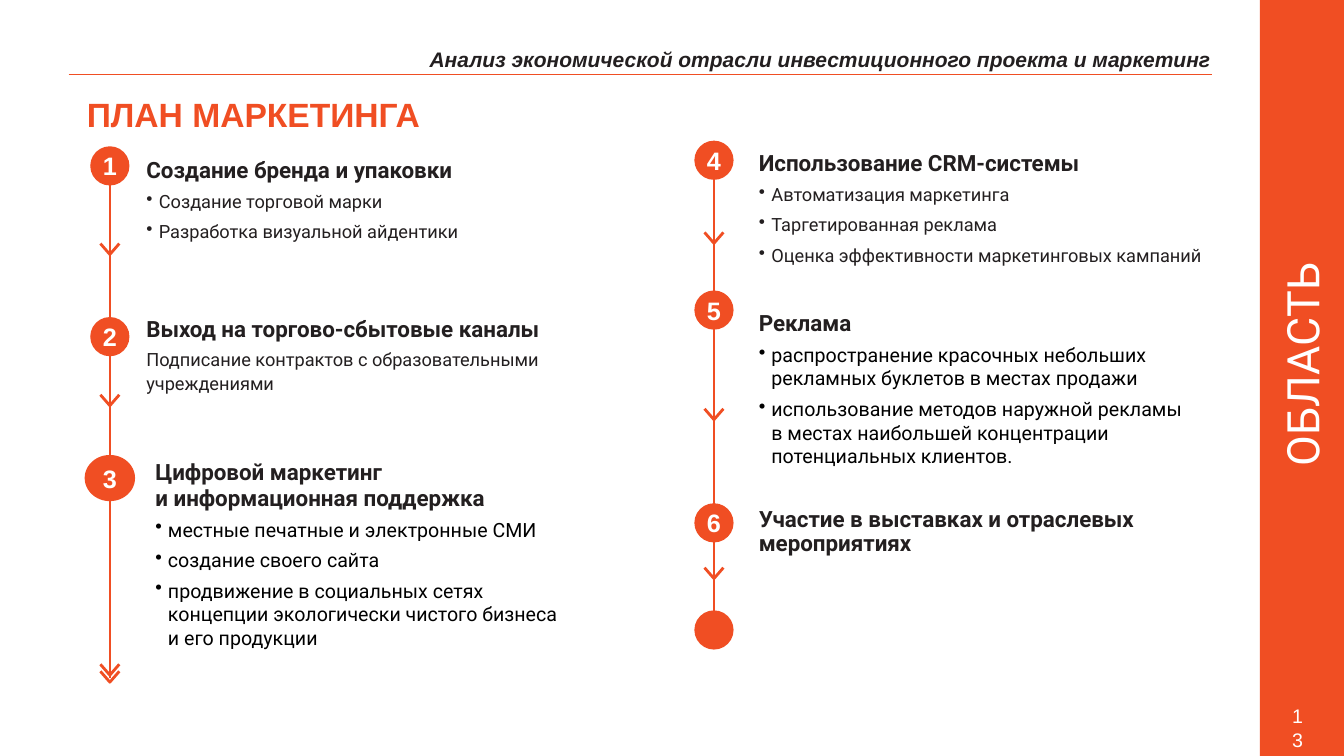
import pptx
import pptx.dml.color
import pptx.enum.shapes
import pptx.enum.text
import pptx.oxml.ns
import pptx.util
from lxml import etree

Pt = pptx.util.Pt
ALIGN = pptx.enum.text.PP_ALIGN
ORANGE = "F04E23"
DARK = "231F20"
BLACK = "000000"
WHITE = "FFFFFF"


def color(value):
    return pptx.dml.color.RGBColor.from_string(value)


def style_font(paragraph, name, size, fill, bold=False, italic=False):
    font = paragraph.font
    font.name = name
    font.size = Pt(size)
    font.bold = bold
    font.italic = italic
    font.color.rgb = color(fill)


def prepare_frame(shape, wrap=True):
    frame = shape.text_frame
    frame.margin_left = frame.margin_right = 0
    frame.margin_top = frame.margin_bottom = 0
    frame.word_wrap = wrap
    return frame


def add_text(slide, box, text, name, size, fill, align=ALIGN.LEFT, **styles):
    shape = slide.shapes.add_textbox(*map(Pt, box))
    paragraph = prepare_frame(shape).paragraphs[0]
    paragraph.text = text
    paragraph.alignment = align
    style_font(paragraph, name, size, fill, **styles)
    return shape


def add_bullet(paragraph):
    properties = paragraph._p.get_or_add_pPr()
    properties.set("marL", str(Pt(9)))
    properties.set("indent", str(-Pt(9)))
    bullet = etree.SubElement(properties, pptx.oxml.ns.qn("a:buChar"))
    bullet.set("char", "•")


def add_step(slide, box, headings, items, size=13, fill=DARK, gaps=(5, 5, 5),
             line_height=None, bulleted=True):
    frame = prepare_frame(slide.shapes.add_textbox(*map(Pt, box)))
    for index, text in enumerate(headings + items):
        paragraph = frame.paragraphs[0] if index == 0 else frame.add_paragraph()
        paragraph.text = text
        is_item = index >= len(headings)
        if is_item and bulleted:
            add_bullet(paragraph)
        if is_item:
            paragraph.space_before = Pt(gaps[index - len(headings)])
        if line_height and not (is_item and bulleted):
            paragraph.line_spacing = Pt(line_height)
        if is_item:
            style_font(paragraph, "Roboto", size, fill)
        else:
            style_font(paragraph, "Roboto", 16, DARK, bold=True)


def add_line(slide, x1, y1, x2, y2, width):
    line = slide.shapes.add_connector(
        pptx.enum.shapes.MSO_CONNECTOR.STRAIGHT, Pt(x1), Pt(y1), Pt(x2), Pt(y2))
    line.line.color.rgb = color(ORANGE)
    line.line.width = Pt(width)
    etree.SubElement(line._element.spPr, pptx.oxml.ns.qn("a:effectLst"))


def add_solid(slide, kind, left, top, width, height):
    shape = slide.shapes.add_shape(kind, Pt(left), Pt(top), Pt(width), Pt(height))
    shape.shadow.inherit = False
    shape.fill.solid()
    shape.fill.fore_color.rgb = color(ORANGE)
    shape.line.fill.background()
    return shape


def add_marker(slide, x, y, number, width=28, height=28):
    circle = add_solid(slide, pptx.enum.shapes.MSO_SHAPE.OVAL,
                       x - width / 2, y - height / 2, width, height)
    if number:
        frame = prepare_frame(circle, wrap=False)
        frame.vertical_anchor = pptx.enum.text.MSO_ANCHOR.MIDDLE
        paragraph = frame.paragraphs[0]
        paragraph.text = number
        paragraph.alignment = ALIGN.CENTER
        style_font(paragraph, "Arial", 18, WHITE, bold=True)


def add_chevron(slide, x, top):
    builder = slide.shapes.build_freeform(Pt(x - 6.75), Pt(top))
    builder.add_line_segments(
        [(Pt(x), Pt(top + 7.75)), (Pt(x + 6.75), Pt(top))], close=False)
    chevron = builder.convert_to_shape()
    chevron.shadow.inherit = False
    chevron.fill.background()
    chevron.line.color.rgb = color(ORANGE)
    chevron.line.width = Pt(2)


def add_track(slide, x, top, bottom, markers, chevrons):
    add_line(slide, x, top, x, bottom, 1)
    for marker in markers:
        add_marker(slide, x, *marker)
    for chevron_top in chevrons:
        add_chevron(slide, x, chevron_top)


def add_side_band(slide):
    add_solid(slide, pptx.enum.shapes.MSO_SHAPE.RECTANGLE, 900, 0, 60, 540)
    region = add_text(slide, (840, 241, 180, 39), "ОБЛАСТЬ", "Roboto", 32, WHITE,
                      ALIGN.CENTER)
    region.rotation = 270
    add_text(slide, (923, 503, 14, 34), "13", "Arial", 14, WHITE)


def main():
    presentation = pptx.Presentation()
    presentation.slide_width = Pt(960)
    presentation.slide_height = Pt(540)
    slide = presentation.slides.add_slide(presentation.slide_layouts[6])

    add_side_band(slide)
    add_text(slide, (62, 67, 260, 31), "ПЛАН МАРКЕТИНГА", "Arial", 24, ORANGE, bold=True)
    add_text(slide, (287, 33, 578, 20),
             "Анализ экономической отрасли инвестиционного проекта и маркетинг",
             "Arial", 15, DARK, ALIGN.RIGHT, bold=True, italic=True)
    add_line(slide, 49, 53, 866, 53, 0.5)

    add_track(slide, 78.5, 125, 484,
              [(118.5, "1"), (240.5, "2"), (341.5, "3", 36, 33)],
              [174, 282, 474.5, 479.5])
    add_track(slide, 510, 122, 459,
              [(114.5, "4"), (221.5, "5"), (373.5, "6"), (450, "")],
              [166, 292, 405.5])

    add_step(slide, (104.5, 111.5, 349, 62), ["Создание бренда и упаковки"],
             ["Создание торговой марки", "Разработка визуальной айдентики"],
             gaps=(5.1, 5.7))
    add_step(slide, (104.5, 227, 331, 55), ["Выход на торгово-сбытовые каналы"],
             ["Подписание контрактов с образовательными учреждениями"],
             gaps=(3.4,), line_height=17, bulleted=False)
    add_step(slide, (111, 328.5, 291, 136),
             ["Цифровой маркетинг", "и информационная поддержка"],
             ["местные печатные и электронные СМИ",
              "создание своего сайта",
              "продвижение в социальных сетях концепции экологически "
              "чистого бизнеса и его продукции"],
             size=14, fill=BLACK, line_height=18.1)
    add_step(slide, (542, 106.5, 320, 85), ["Использование CRM-системы"],
             ["Автоматизация маркетинга", "Таргетированная реклама",
              "Оценка эффективности маркетинговых кампаний"],
             gaps=(5.1, 5.7, 7.1))
    add_step(slide, (542, 220.5, 307, 115), ["Реклама"],
             ["распространение красочных небольших рекламных буклетов "
              "в местах продажи",
              "использование методов наружной рекламы в местах наибольшей "
              "концентрации потенциальных клиентов."],
             size=14, fill=BLACK, gaps=(5.1, 5.1))
    add_step(slide, (542, 363, 296, 34),
             ["Участие в выставках и отраслевых мероприятиях"], [], line_height=17)

    presentation.save("out.pptx")


if __name__ == "__main__":
    main()
